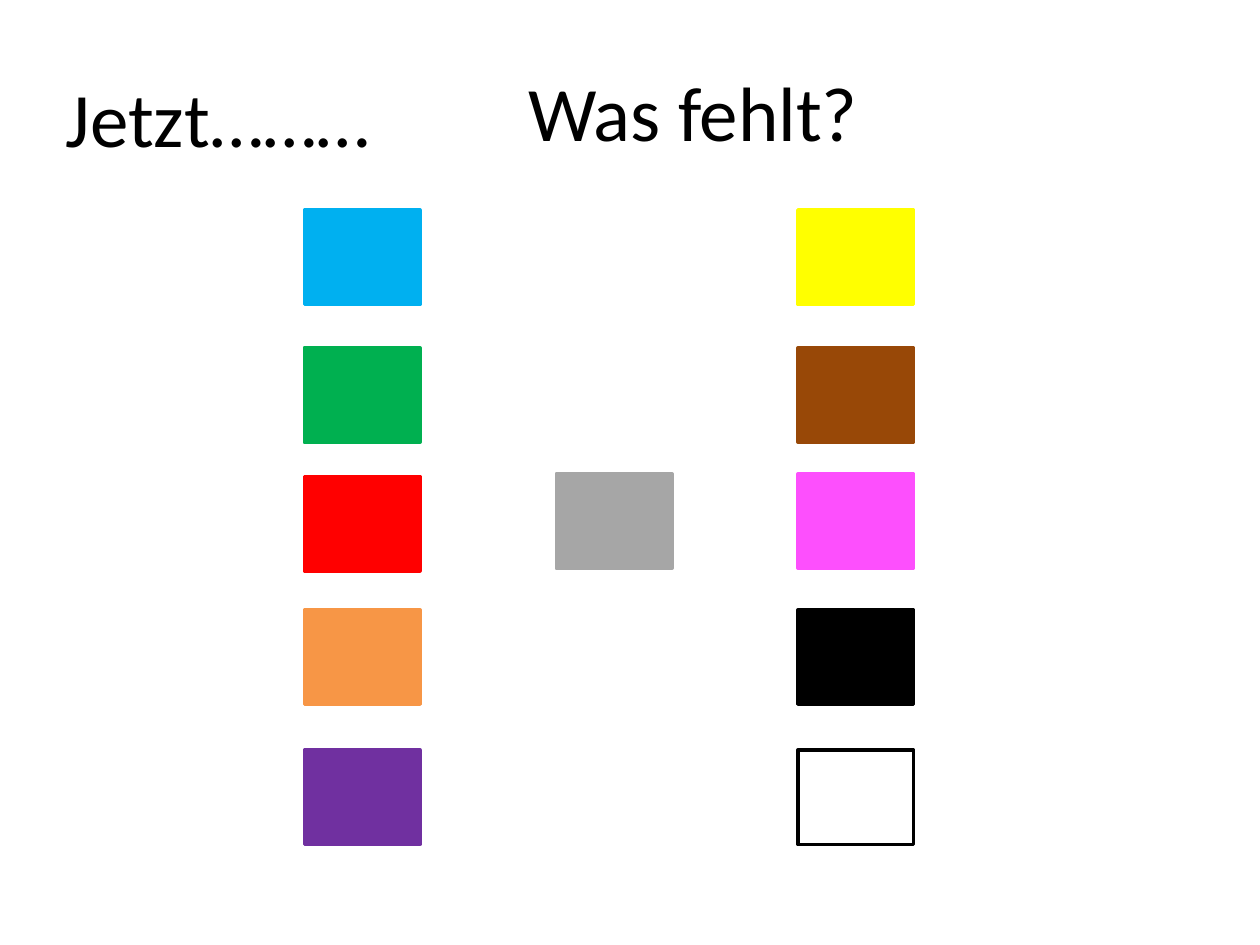
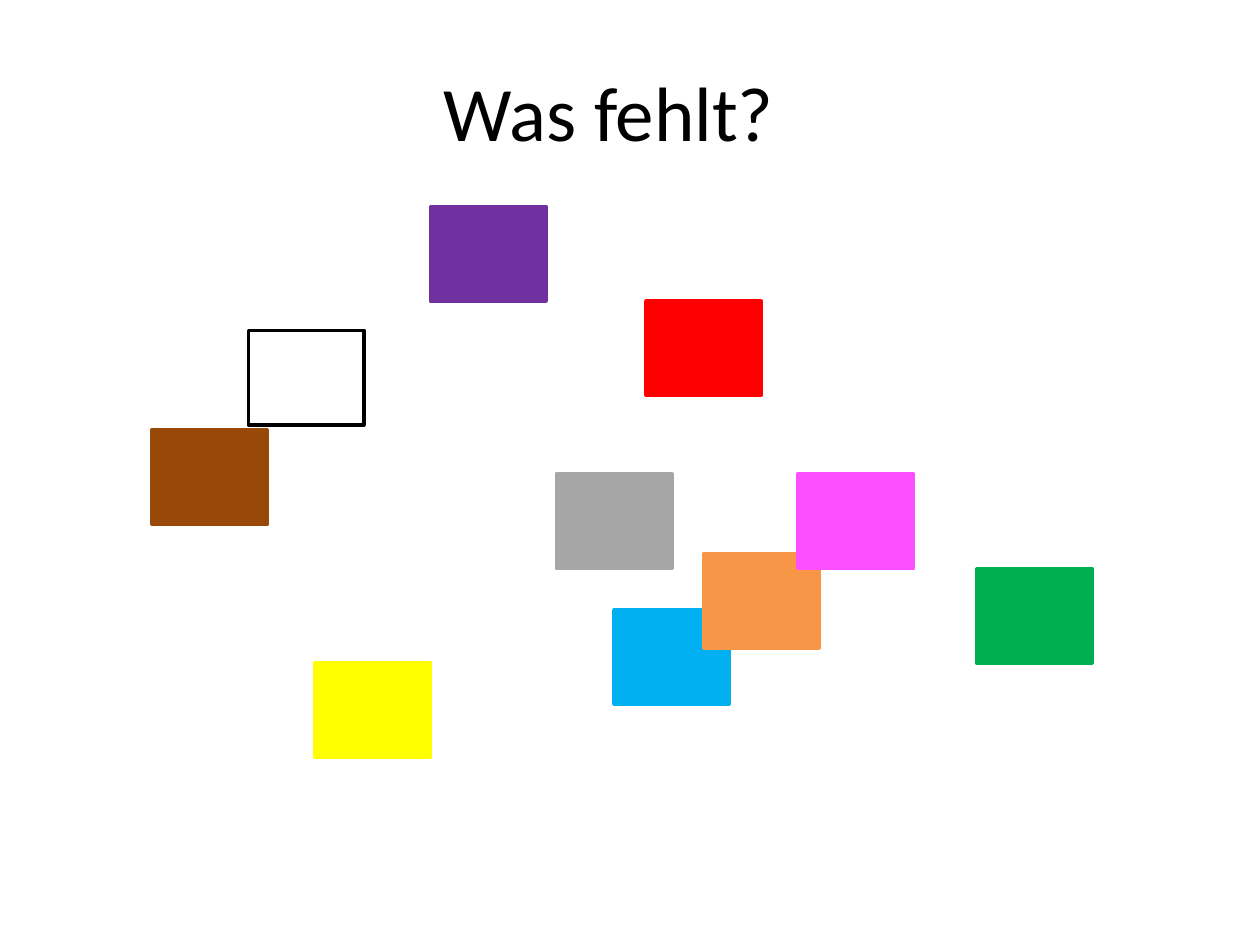
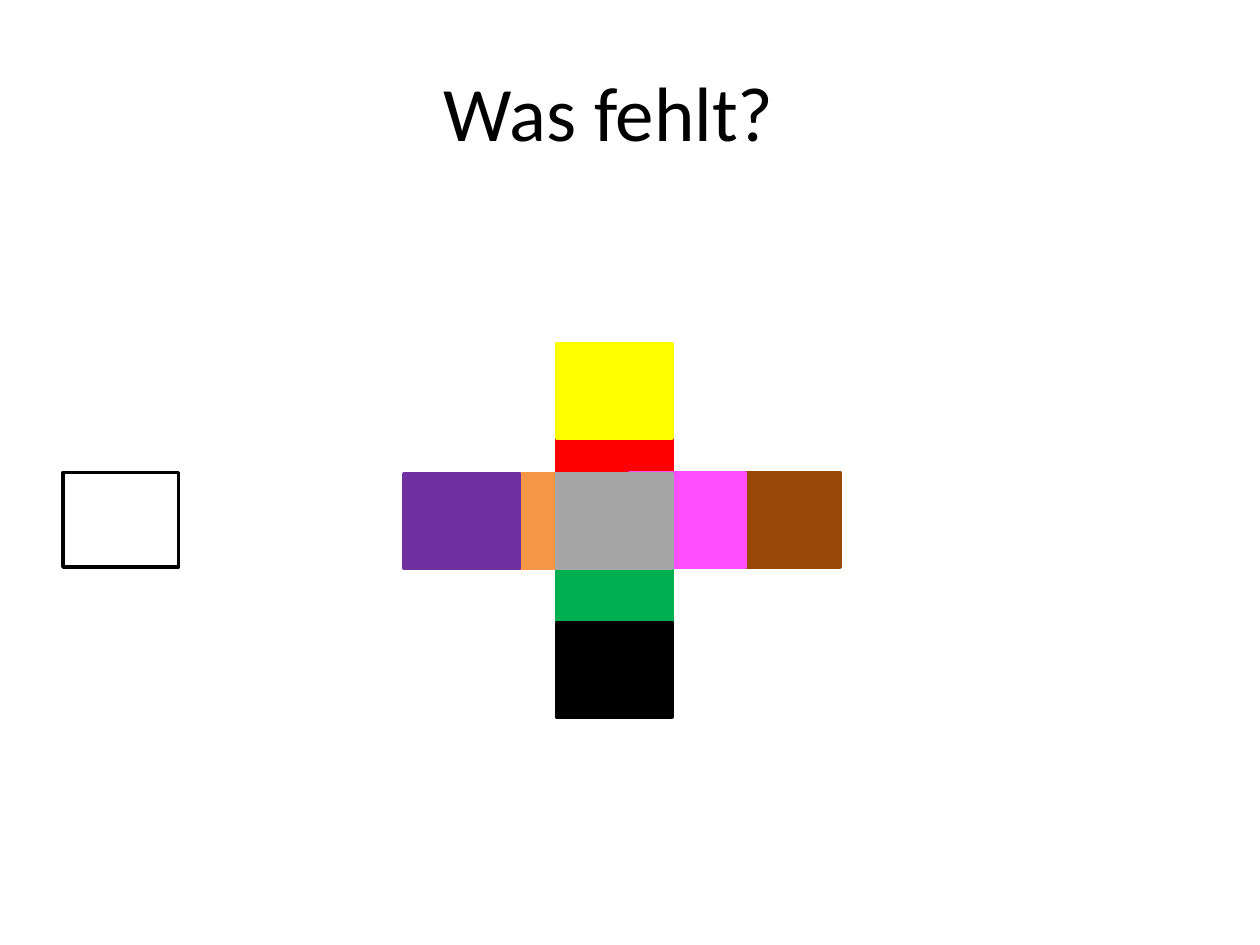
from dataclasses import dataclass

from pptx import Presentation
from pptx.dml.color import RGBColor
from pptx.enum.shapes import MSO_SHAPE
from pptx.enum.text import MSO_ANCHOR, PP_ALIGN
from pptx.slide import Slide
from pptx.util import Pt

BLUE = RGBColor(0x00, 0xB0, 0xF0)
GREEN = RGBColor(0x00, 0xB0, 0x50)
RED = RGBColor(0xFF, 0x00, 0x00)
ORANGE = RGBColor(0xF7, 0x96, 0x46)
PURPLE = RGBColor(0x70, 0x30, 0xA0)
YELLOW = RGBColor(0xFF, 0xFF, 0x00)
BROWN = RGBColor(0x98, 0x48, 0x07)
PINK = RGBColor(0xFD, 0x4F, 0xFD)
GREY = RGBColor(0xA6, 0xA6, 0xA6)
BLACK = RGBColor(0x00, 0x00, 0x00)
WHITE = RGBColor(0xFF, 0xFF, 0xFF)

CARD_WIDTH, CARD_HEIGHT = 66, 54
CARD_LINE = 2
LEFT_COLUMN, CENTRE, RIGHT_COLUMN = 174, 318, 456
MIDDLE = 270.75
TITLE_FONT, TITLE_SIZE = "Calibri", 44
TITLE_HEIGHT = 90
QUESTION = "Was fehlt?"


@dataclass(frozen=True)
class Title:
    text: str
    left: float
    top: float = 18
    width: float = 456


@dataclass(frozen=True)
class Card:
    colour: RGBColor
    left: float
    top: float


def column(left: float, tops: list[float], colours: list[RGBColor]) -> list[Card]:
    return [Card(colour, left, top) for colour, top in zip(colours, tops)]


CENTRED_QUESTION = Title(QUESTION, 120)
GREY_CARD = Card(GREY, CENTRE, MIDDLE)

# Cards run from back to front, because some of them overlap.
SLIDES = [
    (
        [Title("Jetzt………", -102, 21.5, 453), Title(QUESTION, 168)],
        column(LEFT_COLUMN, [120, 198.75, 272.25, 348.5, 428.5],
               [BLUE, GREEN, RED, ORANGE, PURPLE])
        + column(RIGHT_COLUMN, [120, 198.75, MIDDLE, 348.5, 428.5],
                 [YELLOW, BROWN, PINK, BLACK, WHITE])
        + [GREY_CARD],
    ),
    (
        [CENTRED_QUESTION],
        [
            Card(BLUE, 351, 348.5),
            Card(GREEN, 558, 324.75),
            Card(RED, 369, 172),
            Card(ORANGE, 402, 316.5),
            Card(PURPLE, 246, 118),
            Card(BROWN, 87, 245.5),
            Card(WHITE, 142, 188.75),
            Card(PINK, RIGHT_COLUMN, MIDDLE),
            GREY_CARD,
            Card(YELLOW, 180, 378.75),
        ],
    ),
    (
        [CENTRED_QUESTION],
        [
            Card(GREEN, CENTRE, 306),
            Card(RED, CENTRE, 244),
            Card(ORANGE, 264, MIDDLE),
            Card(PURPLE, 231, MIDDLE),
            Card(BROWN, 414, 270),
            Card(WHITE, 36, 270),
            Card(PINK, 360, 270),
            Card(BLACK, CENTRE, 355.75),
            GREY_CARD,
            Card(YELLOW, CENTRE, 196.5),
        ],
    ),
]


def draw_title(slide: Slide, title: Title) -> None:
    box = slide.shapes.add_textbox(
        Pt(title.left), Pt(title.top), Pt(title.width), Pt(TITLE_HEIGHT))
    frame = box.text_frame
    frame.word_wrap = True
    frame.vertical_anchor = MSO_ANCHOR.MIDDLE
    paragraph = frame.paragraphs[0]
    paragraph.alignment = PP_ALIGN.CENTER
    run = paragraph.add_run()
    run.text = title.text
    run.font.name = TITLE_FONT
    run.font.size = Pt(TITLE_SIZE)
    run.font.color.rgb = BLACK


def draw_card(slide: Slide, card: Card) -> None:
    """Draw a colour card outlined in its own colour; white gets a black outline."""
    shape = slide.shapes.add_shape(
        MSO_SHAPE.RECTANGLE, Pt(card.left), Pt(card.top), Pt(CARD_WIDTH), Pt(CARD_HEIGHT))
    shape.shadow.inherit = False
    shape.fill.solid()
    shape.fill.fore_color.rgb = card.colour
    shape.line.color.rgb = BLACK if card.colour == WHITE else card.colour
    shape.line.width = Pt(CARD_LINE)


def main() -> None:
    presentation = Presentation()
    presentation.slide_width = Pt(720)
    presentation.slide_height = Pt(540)
    blank = presentation.slide_layouts[6]
    for titles, cards in SLIDES:
        slide = presentation.slides.add_slide(blank)
        for title in titles:
            draw_title(slide, title)
        for card in cards:
            draw_card(slide, card)
    presentation.save("out.pptx")


if __name__ == "__main__":
    main()
